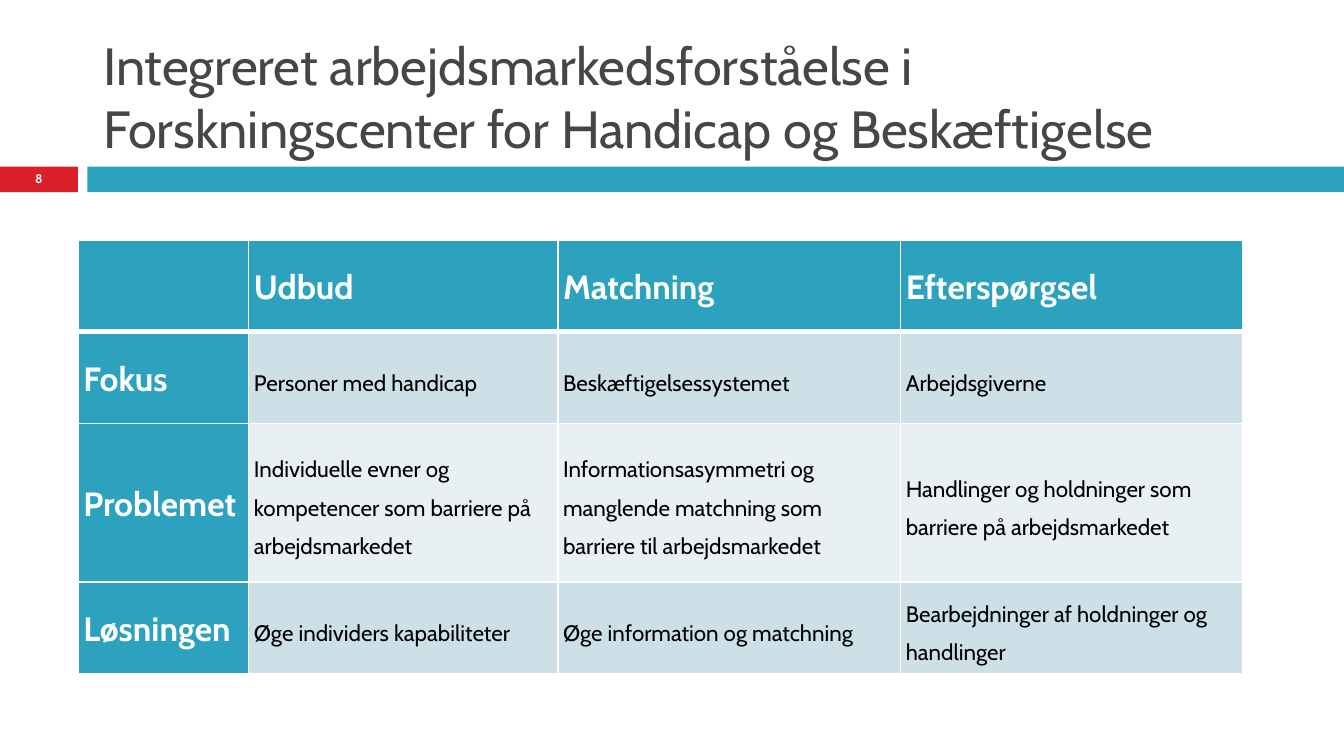
from lxml import etree
from pptx import Presentation
from pptx import util as u
from pptx.dml.color import RGBColor
from pptx.enum import shapes, text
from pptx.oxml import ns

FONT = "Cabin"
HUES = {"red": "DA1F28", "teal": "2DA2BF", "grey": "464646", "white": "FFFFFF",
        "black": "000000", "band": "CDE0E8", "pale": "E8F0F4"}
TITLE = "Integreret arbejdsmarkedsforståelse i Forskningscenter for Handicap og Beskæftigelse"
PAGE = "8"
BARS = [("red", 0, 0.58), ("teal", 0.65, 9.35)]
COLS = [1.27, 2.3, 2.55, 2.55]
ROWS = [
    (0.68, ["", "Udbud", "Matchning", "Efterspørgsel"]),
    (0.68, ["Fokus", "Personer med handicap", "Beskæftigelsessystemet", "Arbejdsgiverne"]),
    (1.18, ["Problemet",
            "Individuelle evner og kompetencer som barriere på arbejdsmarkedet",
            "Informationsasymmetri og manglende matchning som barriere til arbejdsmarkedet",
            "Handlinger og holdninger som barriere på arbejdsmarkedet"]),
    (0.68, ["Løsningen", "Øge individers kapabiliteter", "Øge information og matchning",
            "Bearbejdninger af holdninger og handlinger"]),
]


def color(name):
    return RGBColor.from_string(HUES[name])


def paint(item, name):
    item.fill.solid()
    item.fill.fore_color.rgb = color(name)


def write(para, words, size, hue, bold=False):
    run = para.add_run()
    run.text = words
    run.font.name = FONT
    run.font.size = u.Pt(size)
    run.font.bold = bold
    run.font.color.rgb = color(hue)


def add_text(slide, box, words, size, hue, anchor, bold=False):
    frame = slide.shapes.add_textbox(*map(u.Inches, box)).text_frame
    frame.word_wrap = True
    frame.vertical_anchor = anchor
    write(frame.paragraphs[0], words, size, hue, bold)
    return frame


def set_edges(cell, base):
    props = cell._tc.get_or_add_tcPr()
    for spot, (side, wide) in enumerate([("L", 1), ("R", 1), ("T", 1), ("B", base)]):
        line = etree.Element(ns.qn(f"a:ln{side}"), w=str(u.Pt(wide)))
        fill = etree.SubElement(line, ns.qn("a:solidFill"))
        etree.SubElement(fill, ns.qn("a:srgbClr"), val=HUES["white"])
        props.insert(spot, line)


def fill_cell(cell, words, row, col):
    head = row == 0 or col == 0
    paint(cell, "teal" if head else "band" if row % 2 else "pale")
    set_edges(cell, 3 if row == 0 else 1)
    cell.vertical_anchor = text.MSO_ANCHOR.MIDDLE
    cell.margin_left = cell.margin_right = u.Inches(0.04)
    cell.margin_top = cell.margin_bottom = u.Inches(0.04)
    para = cell.text_frame.paragraphs[0]
    if not words:
        return
    if head:
        para.line_spacing = 1.07
        para.space_before = u.Pt(2)
        write(para, words, 18, "white", True)
    else:
        para.line_spacing = 1.4
        para.space_after = u.Pt(8)
        write(para, words, 12, "black")


def add_grid(slide):
    box = (0.58, 1.79, sum(COLS), sum(high for high, _ in ROWS))
    grid = slide.shapes.add_table(len(ROWS), len(COLS), *map(u.Inches, box)).table
    for col, wide in enumerate(COLS):
        grid.columns[col].width = u.Inches(wide)
    for row, (high, cells) in enumerate(ROWS):
        grid.rows[row].height = u.Inches(high)
        for col, words in enumerate(cells):
            fill_cell(grid.cell(row, col), words, row, col)


def main():
    deck = Presentation()
    deck.slide_width = u.Inches(10)
    deck.slide_height = deck.slide_width * 9 // 16
    slide = deck.slides.add_slide(deck.slide_layouts[6])
    for hue, left, wide in BARS:
        bar = slide.shapes.add_shape(shapes.MSO_SHAPE.RECTANGLE,
                                     *map(u.Inches, (left, 1.24, wide, 0.19)))
        bar.shadow.inherit = False
        paint(bar, hue)
        bar.line.fill.background()
    add_text(slide, (0.67, 0.13, 8.92, 1.1), TITLE, 28, "grey", text.MSO_ANCHOR.BOTTOM)
    add_grid(slide)
    page = add_text(slide, (0, 1.23, 0.58, 0.2), PAGE, 6.7, "white",
                    text.MSO_ANCHOR.MIDDLE, True)
    page.margin_top = page.margin_bottom = 0
    page.paragraphs[0].alignment = text.PP_ALIGN.CENTER
    deck.save("out.pptx")


if __name__ == "__main__":
    main()
